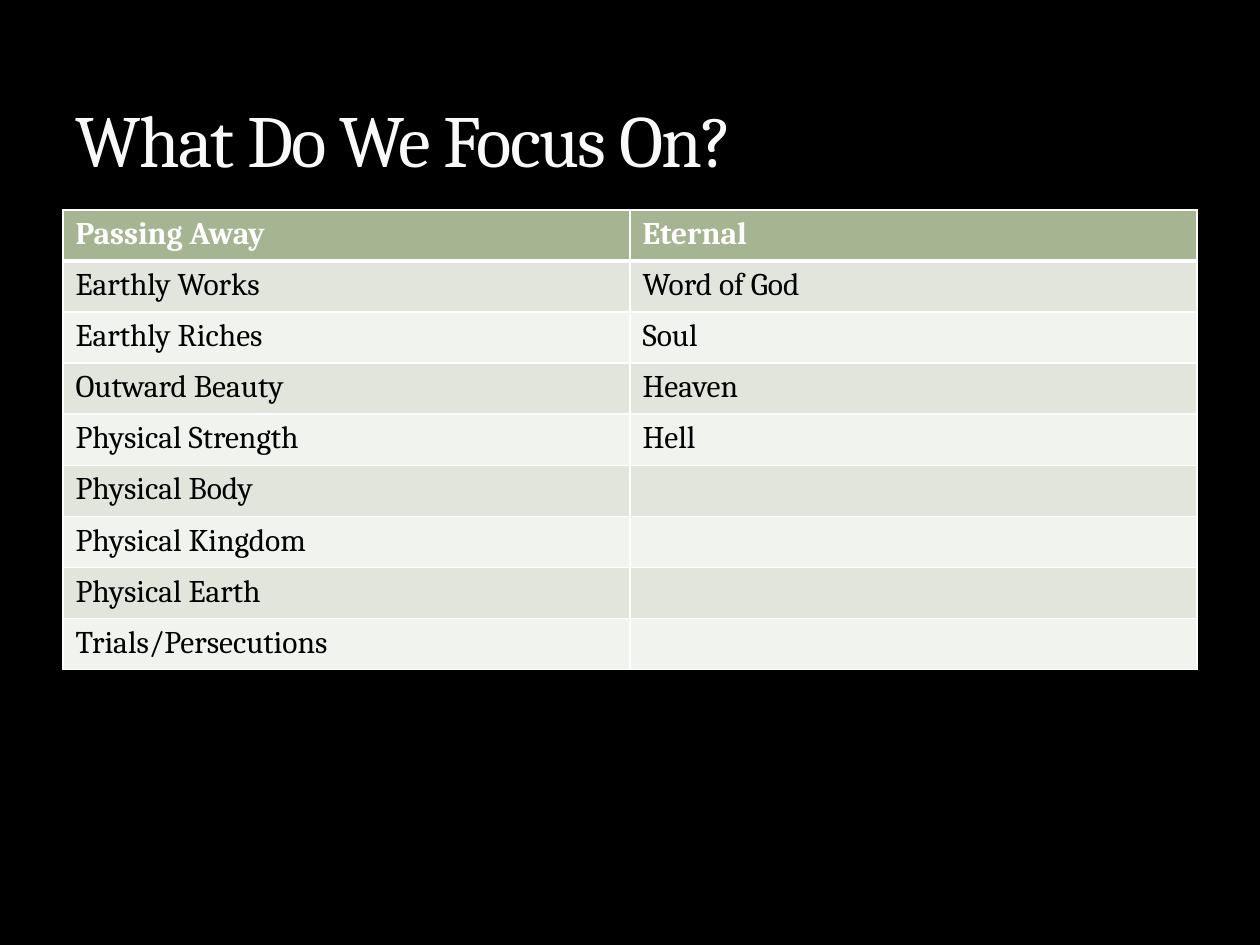
from pptx import Presentation
from pptx.dml.color import RGBColor
from pptx.enum.text import MSO_ANCHOR as Anchor, PP_ALIGN as Align
from pptx.oxml import parse_xml
from pptx.oxml.ns import nsdecls
from pptx.util import Cm, Pt

COLORS = {
    "background": "000000",
    "title": "F9F9F9",
    "title_outline": "3C4422",
    "header": "A5B592",
    "band_dark": "E1E5DC",
    "band_light": "F0F3EE",
    "border": "FFFFFF",
    "header_text": "FFFFFF",
    "body_text": "000000",
}
PASSING_AWAY = [
    "Earthly Works", "Earthly Riches", "Outward Beauty", "Physical Strength",
    "Physical Body", "Physical Kingdom", "Physical Earth", "Trials/Persecutions",
]
ETERNAL = ["Word of God", "Soul", "Heaven", "Hell"]


def line_xml(tag, color, width, alpha=100):
    return parse_xml(
        f'<a:{tag} {nsdecls("a")} w="{Pt(width)}"><a:solidFill><a:srgbClr val="{color}">'
        f'<a:alpha val="{alpha * 1000}"/></a:srgbClr></a:solidFill></a:{tag}>')


class SlideBuilder:
    font_name = "Cambria"

    def __init__(self, presentation):
        self.slide = presentation.slides.add_slide(presentation.slide_layouts[5])
        fill = self.slide.background.fill
        fill.solid()
        fill.fore_color.rgb = RGBColor.from_string(COLORS["background"])

    def add_run(self, paragraph, text, size, color, bold=False):
        run = paragraph.add_run()
        run.text = text
        run.font.name = self.font_name
        run.font.size = Pt(size)
        run.font.bold = bold
        run.font.color.rgb = RGBColor.from_string(COLORS[color])
        return run

    def add_title(self, text, left, top, width, height):
        title = self.slide.shapes.title
        title.left, title.top, title.width, title.height = left, top, width, height
        frame = title.text_frame
        frame.word_wrap = True
        frame.vertical_anchor = Anchor.BOTTOM
        paragraph = frame.paragraphs[0]
        paragraph.alignment = Align.LEFT
        properties = self.add_run(paragraph, text, 42, "title").font._element
        properties.set("spc", "-100")
        properties.insert(0, line_xml("ln", COLORS["title_outline"], 0.25, 25))

    def add_table(self, rows, left, top, width, row_height):
        table = self.slide.shapes.add_table(
            len(rows), len(rows[0]), left, top, width, row_height * len(rows)).table
        for row_index, texts in enumerate(rows):
            for column_index, text in enumerate(texts):
                self.format_cell(table.cell(row_index, column_index), text, row_index)

    def format_cell(self, cell, text, row_index):
        is_header = row_index == 0
        band = "band_dark" if row_index % 2 else "band_light"
        cell.fill.solid()
        cell.fill.fore_color.rgb = RGBColor.from_string(
            COLORS["header" if is_header else band])
        paragraph = cell.text_frame.paragraphs[0]
        if text:
            color = "header_text" if is_header else "body_text"
            self.add_run(paragraph, text, 18, color, is_header)
        else:
            paragraph.font.size = Pt(18)
        widths = {"lnL": 1, "lnR": 1, "lnT": 3 if row_index == 1 else 1,
                  "lnB": 3 if is_header else 1}
        properties = cell._tc.get_or_add_tcPr()
        for position, (tag, line_width) in enumerate(widths.items()):
            properties.insert(position, line_xml(tag, COLORS["border"], line_width))


def main():
    presentation = Presentation()
    presentation.slide_width = Cm(25.4)
    presentation.slide_height = Cm(19.05)
    builder = SlideBuilder(presentation)
    left, width = Cm(1.27), Cm(22.86)
    blanks = [""] * (len(PASSING_AWAY) - len(ETERNAL))
    rows = [("Passing Away", "Eternal"), *zip(PASSING_AWAY, ETERNAL + blanks)]
    builder.add_table(rows, left, Cm(4.23), width, Cm(1.03))
    builder.add_title("What Do We Focus On?", left, Cm(0.42), width, Cm(3.39))
    presentation.save("out.pptx")


if __name__ == "__main__":
    main()
